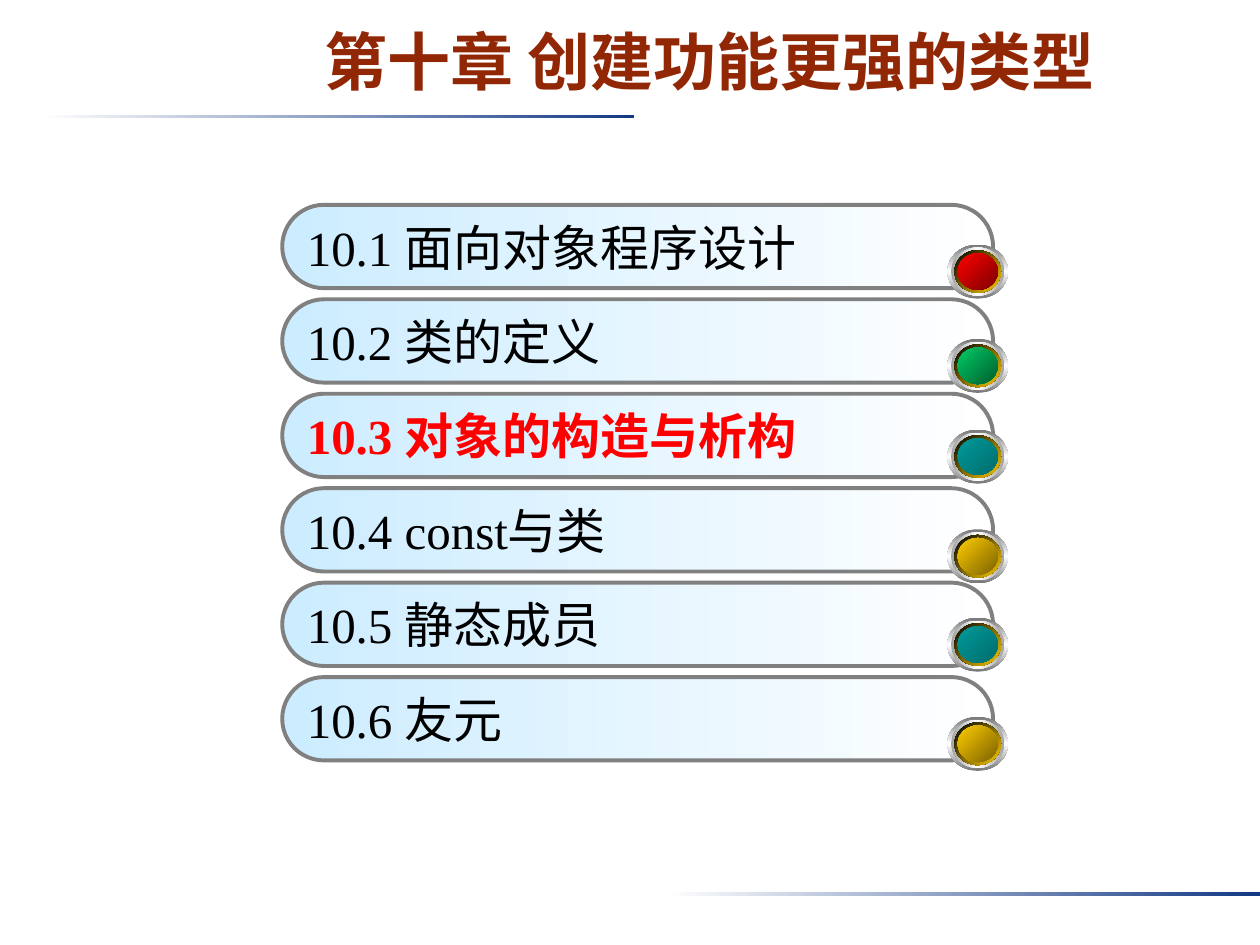
import pptx
import pptx.dml.color
import pptx.enum.shapes
import pptx.enum.text
import pptx.oxml
import pptx.oxml.ns
import pptx.util

Cm, Pt = pptx.util.Cm, pptx.util.Pt
SHAPE = pptx.enum.shapes.MSO_SHAPE


def color(hex_string):
    return pptx.dml.color.RGBColor.from_string(hex_string)


def add_gradient_shape(shapes, kind, box, colors, angle=0):
    """Add a borderless shape whose colours are spread evenly along the angle."""
    shape = shapes.add_shape(kind, *[Cm(length) for length in box])
    shape.shadow.inherit = False
    shape.line.fill.background()
    stops = "".join(
        f'<a:gs pos="{100000 * i // (len(colors) - 1)}"><a:srgbClr val="{c}"/></a:gs>'
        for i, c in enumerate(colors))
    gradient = pptx.oxml.parse_xml(
        f'<a:gradFill {pptx.oxml.ns.nsdecls("a")} rotWithShape="1"><a:gsLst>{stops}</a:gsLst>'
        f'<a:lin ang="{angle * 60000}" scaled="0"/></a:gradFill>')
    shape._element.spPr.find(pptx.oxml.ns.qn("a:prstGeom")).addnext(gradient)
    return shape


presentation = pptx.Presentation()
presentation.slide_width, presentation.slide_height = Cm(25.4), Cm(19.05)
slide = presentation.slides.add_slide(presentation.slide_layouts[5])

# Fading rules below the title and at the foot
for left, top in [(0.79, 2.31), (13.41, 17.98)]:
    add_gradient_shape(slide.shapes, SHAPE.RECTANGLE, (left, top, 11.99, 0.08),
                       ["FFFFFF", "133984"])

# Chapter title
chapter = slide.shapes.title
chapter.left, chapter.top, chapter.width, chapter.height = Cm(3.5), Cm(0.3), Cm(21.6), Cm(2.08)
chapter_text = chapter.text_frame
chapter_text.auto_size = pptx.enum.text.MSO_AUTO_SIZE.NONE
chapter_text.vertical_anchor = pptx.enum.text.MSO_ANCHOR.TOP
chapter_text.margin_top, chapter_text.margin_bottom = Cm(0.15), Cm(0.13)
chapter_text.paragraphs[0].alignment = pptx.enum.text.PP_ALIGN.CENTER
chapter_run = chapter_text.paragraphs[0].add_run()
chapter_run.text = "第十章 创建功能更强的类型"
chapter_run.font.name = "Arial"
chapter_run.font.size = Pt(36)
chapter_run.font.bold = True
chapter_run.font.color.rgb = color("922706")

# Sections: text, button top, button colours
RED, GREEN = ["FF0000", "7C0000"], ["00CC66", "005E2F"]
TEAL, GOLD = ["009999", "006D6D"], ["FFCC00", "7C6300"]
sections = [
    ("10.1 面向对象程序设计", 4.93, RED),
    ("10.2 类的定义", 6.83, GREEN),
    ("10.3 对象的构造与析构", 8.66, TEAL),
    ("10.4 const与类", 10.67, GOLD),
    ("10.5 静态成员", 12.45, TEAL),
    ("10.6 友元", 14.45, GOLD),
]
current_section = 2
first_top, last_top = 4.13, 13.65
pitch = (last_top - first_top) / (len(sections) - 1)

# Concentric layers of a button: width, height, colours, angle
button_width, button_height = 1.22, 1.09
rings = [
    (1.22, 1.09, ["767676", "FFFFFF", "767676"], 90),
    (1.07, 0.97, ["A2A2A2", "FFFFFF", "A2A2A2"], 0),
    (0.94, 0.86, ["FFFFFF", "009999", "FFFFFF"], 45),
    (0.94, 0.86, ["000000", "FFCC00"], 45),
    (0.81, 0.74, ["007575", "009999", "007575"], 315),
]

for index, (section, button_top, face) in enumerate(sections):
    # Section bar
    bar = add_gradient_shape(slide.shapes, SHAPE.ROUNDED_RECTANGLE,
                             (5.69, first_top + index * pitch, 14.33, 1.68),
                             ["CCECFF", "FFFFFF"])
    bar.adjustments[0] = 0.5
    bar.line.color.rgb = color("808080")
    bar.line.width = Pt(2.25)
    bar.text_frame.vertical_anchor = pptx.enum.text.MSO_ANCHOR.MIDDLE
    paragraph = bar.text_frame.paragraphs[0]
    paragraph.alignment = pptx.enum.text.PP_ALIGN.LEFT
    run = paragraph.add_run()
    run.text = section
    run.font.name = "Times New Roman"
    run.font.size = Pt(28)
    run.font.bold = index == current_section
    run.font.color.rgb = color("FF0000" if index == current_section else "000000")

    # Round button at the right end
    button = slide.shapes.add_group_shape()
    for width, height, colors, angle in rings + [(0.81, 0.74, face, 45)]:
        add_gradient_shape(button.shapes, SHAPE.OVAL,
                           (19.1 + (button_width - width) / 2,
                            button_top + (button_height - height) / 2, width, height),
                           colors, angle)

presentation.save("out.pptx")
